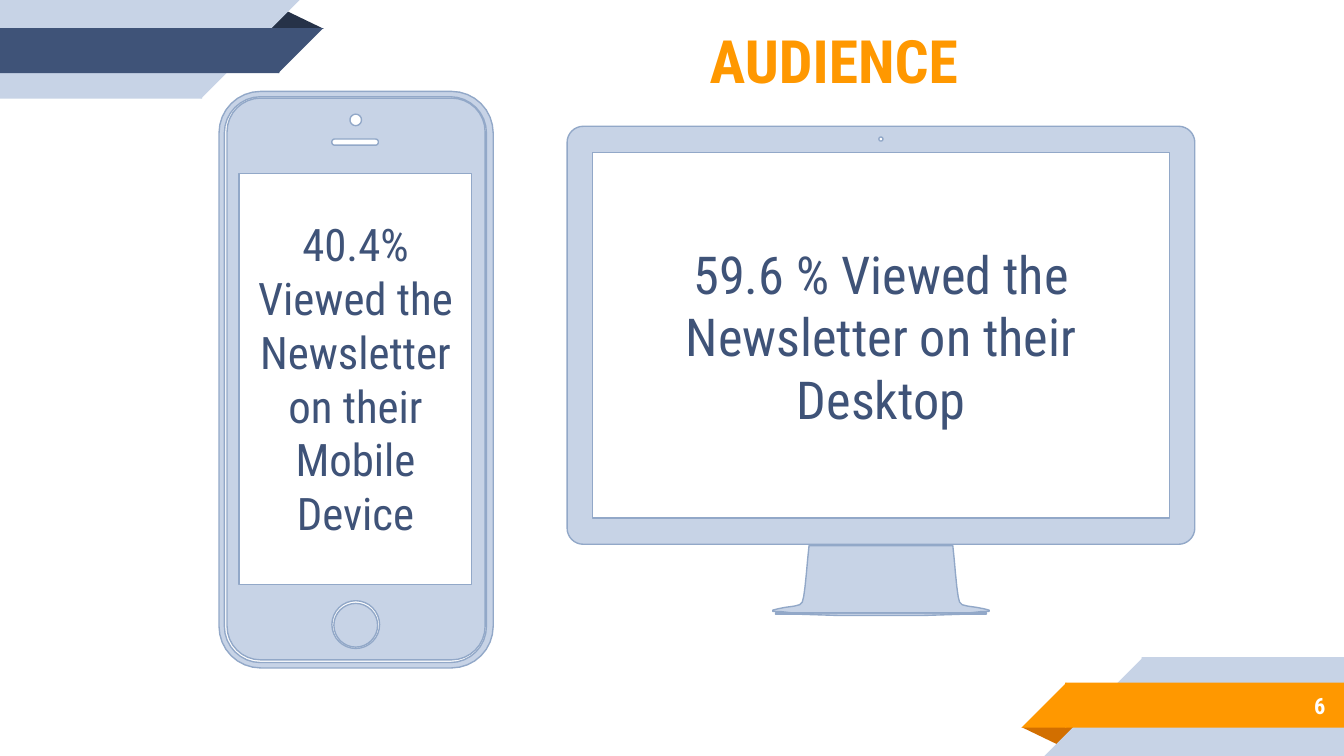
"""Build the audience slide comparing mobile and desktop newsletter views."""
from math import cos, pi, sin

from pptx import Presentation
from pptx.dml.color import RGBColor
from pptx.enum.shapes import MSO_SHAPE
from pptx.enum.text import MSO_ANCHOR, MSO_AUTO_SIZE, PP_ALIGN
from pptx.util import Pt

EMU_PER_PX = 4572
BLANK_LAYOUT = 6
FONT = "Roboto Condensed"
NAVY = RGBColor(0x3F, 0x53, 0x78)
DARK_NAVY = RGBColor(0x26, 0x32, 0x48)
PALE_BLUE = RGBColor(0xC7, 0xD3, 0xE6)
OUTLINE_BLUE = RGBColor(0x92, 0xA8, 0xC8)
ORANGE = RGBColor(0xFF, 0x98, 0x00)
DARK_ORANGE = RGBColor(0xD2, 0x6F, 0x00)
WHITE = RGBColor(0xFF, 0xFF, 0xFF)
RECTANGLE = MSO_SHAPE.RECTANGLE
TRIANGLE = MSO_SHAPE.ISOSCELES_TRIANGLE
RIGHT_TRIANGLE = MSO_SHAPE.RIGHT_TRIANGLE
CENTER, RIGHT = PP_ALIGN.CENTER, PP_ALIGN.RIGHT
MIDDLE, TOP = MSO_ANCHOR.MIDDLE, MSO_ANCHOR.TOP
GROW = MSO_AUTO_SIZE.SHAPE_TO_FIT_TEXT

FOLD_POSITION = 0.324
RIBBONS = [
    (TRIANGLE, (1520, 1082, 86, 28), DARK_ORANGE, 180),
    (RECTANGLE, (1699, 978, 301, 147), PALE_BLUE, 0),
    (RIGHT_TRIANGLE, (1554, 978, 147, 147), PALE_BLUE, 270),
    (RECTANGLE, (1585, 1016, 415, 67), ORANGE, 0),
    (RIGHT_TRIANGLE, (1520, 1016, 67, 67), ORANGE, 270),
    (TRIANGLE, (396, 15, 86, 28), DARK_NAVY, 0),
    (RECTANGLE, (0, 0, 301, 147), PALE_BLUE, 0),
    (RIGHT_TRIANGLE, (299, 0, 147, 147), PALE_BLUE, 90),
    (RECTANGLE, (0, 42, 416, 67), NAVY, 0),
    (RIGHT_TRIANGLE, (414, 42, 67, 67), NAVY, 90),
]
STAND_SIDE = [
    (1204, 812), (1202, 832), (1200, 854), (1198, 874), (1196, 888),
    (1194, 896), (1190, 900), (1182, 902), (1168, 904), (1158, 906),
    (1150, 908), (1150, 910), (1160, 910), (1178, 912), (1210, 912),
]
FOOT_SIDE = [(1154, 912), (1154, 914), (1186, 914), (1250, 916)]
MONITOR_AXIS = 1311


def px(length):
    return round(length * EMU_PER_PX)


def rounded(left, top, width, height, radius=0, steps=8):
    """Return the outline of a rectangle with round corners."""
    if not radius:
        steps = 0
    right, bottom = left + width - radius, top + height - radius
    corners = [
        (right, bottom),
        (left + radius, bottom),
        (left + radius, top + radius),
        (right, top + radius),
    ]
    points = []
    for quarter, (x, y) in enumerate(corners):
        for step in range(steps + 1):
            angle = (quarter + step / max(steps, 1)) * pi / 2
            points.append((x + radius * cos(angle), y + radius * sin(angle)))
    return points


def circle(left, top, diameter):
    return rounded(left, top, diameter, diameter, diameter / 2)


def mirrored(side, axis):
    return side + [(2 * axis - x, y) for x, y in reversed(side)]


class SlideBuilder:
    """Hold the style and the current slide."""

    def __init__(self, slide, font=FONT):
        self.slide = slide
        self.font = font

    def preset(self, kind, box, color, rotation):
        shape = self.slide.shapes.add_shape(kind, *map(px, box))
        shape.shadow.inherit = False
        shape.fill.solid()
        shape.fill.fore_color.rgb = color
        shape.line.fill.background()
        shape.rotation = rotation
        if kind == TRIANGLE:
            shape.adjustments[0] = FOLD_POSITION

    def outline(self, contours):
        builder = None
        for contour in contours:
            start, *others = [(px(x), px(y)) for x, y in contour]
            if builder is None:
                builder = self.slide.shapes.build_freeform(*start, scale=1.0)
            else:
                builder.move_to(*start)
            builder.add_line_segments(others, close=True)
        shape = builder.convert_to_shape()
        shape.shadow.inherit = False
        shape.fill.solid()
        shape.fill.fore_color.rgb = PALE_BLUE
        shape.line.color.rgb = OUTLINE_BLUE
        shape.line.width = Pt(0.75)

    def text(self, box, wording, size, color, bold=False, align=CENTER,
             anchor=MIDDLE, inset=20, space_before=0):
        shape = self.slide.shapes.add_textbox(*map(px, box))
        frame = shape.text_frame
        frame.text = wording
        frame.word_wrap = True
        frame.vertical_anchor = anchor
        frame.margin_left = frame.margin_right = px(20)
        frame.margin_top = frame.margin_bottom = px(inset)
        paragraph = frame.paragraphs[0]
        paragraph.alignment = align
        paragraph.space_before = Pt(space_before)
        font = paragraph.runs[0].font
        font.name, font.size, font.bold = self.font, Pt(size), bold
        font.color.rgb = color
        return shape


def main():
    presentation = Presentation()
    presentation.slide_width = px(2000)
    presentation.slide_height = px(1125)
    layout = presentation.slide_layouts[BLANK_LAYOUT]
    builder = SlideBuilder(presentation.slides.add_slide(layout))

    for ribbon in RIBBONS:
        builder.preset(*ribbon)

    builder.outline([
        circle(1308, 204, 6),
        rounded(882, 227, 858, 544),
        rounded(844, 188, 934, 622, 24),
        mirrored(STAND_SIDE, MONITOR_AXIS),
        mirrored(FOOT_SIDE, MONITOR_AXIS),
    ])
    builder.text((883, 227, 856, 546),
                 "59.6 % Viewed the Newsletter on their Desktop", 28, NAVY)
    builder.text((1666, 1015, 326, 70), "6", 12, WHITE, bold=True, align=RIGHT)
    builder.text((483, 13, 1516, 152), "AUDIENCE", 32, ORANGE, bold=True,
                 space_before=6)

    builder.outline([
        circle(521, 170, 17),
        rounded(494, 207, 69, 9, 4),
        rounded(356, 258, 346, 612),
        circle(497, 898, 65),
        circle(494, 894, 71),
        rounded(338, 146, 384, 836, 50),
        rounded(334, 144, 390, 842, 54),
        rounded(326, 136, 408, 858, 62),
    ])
    mobile = builder.text((354, 313, 350, 504),
                          "40.4% Viewed the Newsletter on their Mobile Device",
                          24, NAVY, anchor=TOP, inset=10)
    mobile.text_frame.auto_size = GROW

    presentation.save("out.pptx")


if __name__ == "__main__":
    main()
